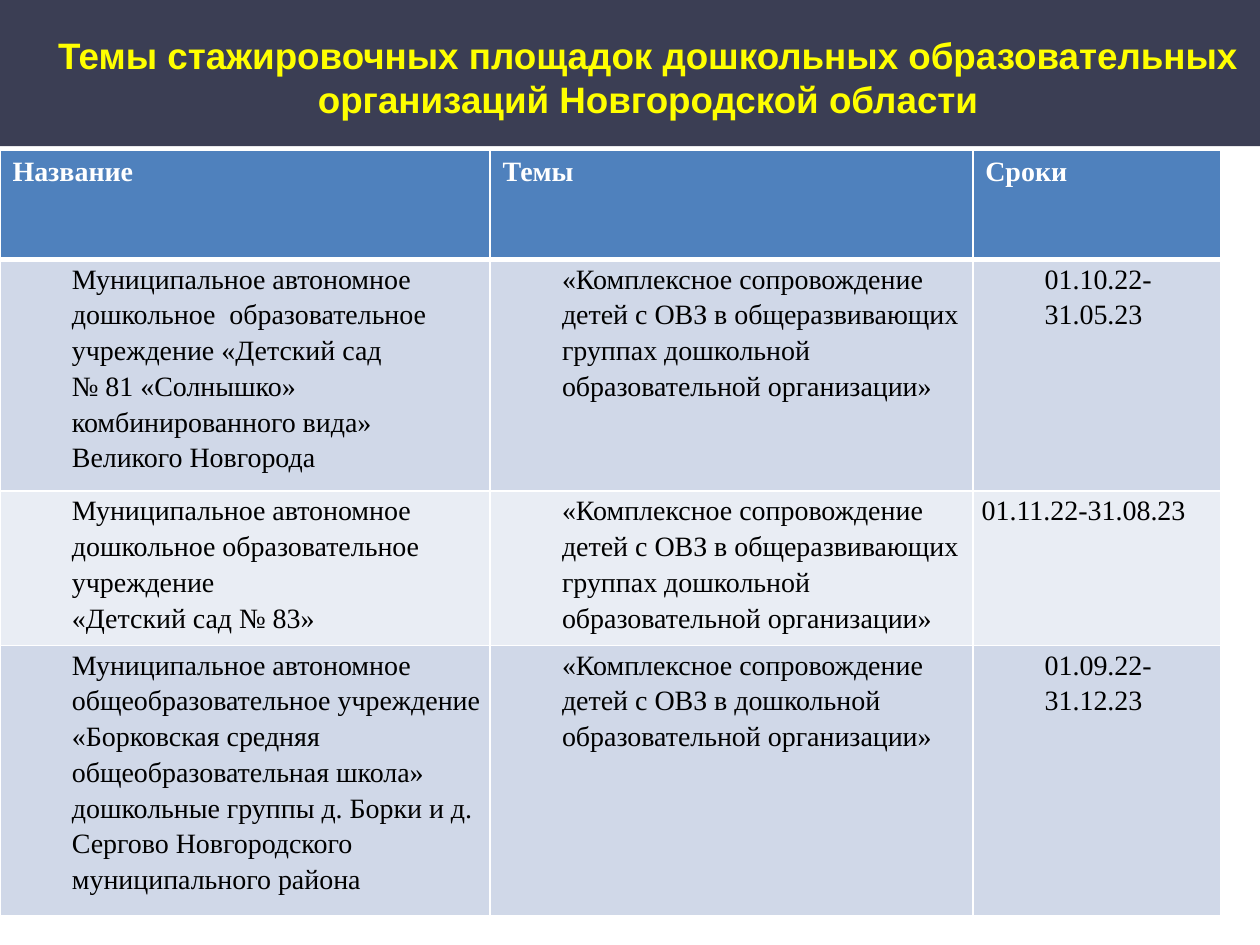
from dataclasses import dataclass

from lxml import etree
from pptx import Presentation
from pptx.dml.color import RGBColor
from pptx.enum.shapes import MSO_SHAPE
from pptx.enum.text import PP_ALIGN
from pptx.oxml.ns import qn
from pptx.util import Cm, Pt

RECTANGLE = MSO_SHAPE.RECTANGLE
CENTER = PP_ALIGN.CENTER


@dataclass(frozen=True)
class Theme:
    band: str = "3B3E54"
    title: str = "FFFF00"
    header: str = "4F81BD"
    odd_row: str = "D0D8E8"
    even_row: str = "E9EDF4"
    light: str = "FFFFFF"
    dark: str = "000000"
    title_font: str = "Arial"
    table_font: str = "Times New Roman"
    title_size: int = 21
    table_size: int = 16
    border: int = 1
    header_border: int = 3


THEME = Theme()
TITLE = "Темы стажировочных площадок дошкольных образовательных организаций Новгородской области"
HEADERS = ["Название", "Темы", "Сроки"]
GENERAL_TOPIC = (
    "«Комплексное сопровождение детей с ОВЗ в общеразвивающих "
    "группах дошкольной образовательной организации»"
)
ROWS = [
    [
        "Муниципальное автономное\n"
        "дошкольное  образовательное учреждение «Детский сад\n"
        "№ 81 «Солнышко» комбинированного вида» Великого Новгорода",
        GENERAL_TOPIC,
        "01.10.22-31.05.23",
    ],
    [
        "Муниципальное автономное дошкольное образовательное учреждение\n"
        "«Детский сад № 83»",
        GENERAL_TOPIC,
        "01.11.22-31.08.23",
    ],
    [
        "Муниципальное автономное общеобразовательное учреждение "
        "«Борковская средняя общеобразовательная школа» дошкольные группы "
        "д. Борки и д. Сергово Новгородского муниципального района",
        "«Комплексное сопровождение детей с ОВЗ в дошкольной "
        "образовательной организации»",
        "01.09.22-31.12.23",
    ],
]
UNINDENTED_CELL = (2, 2)
COLUMN_WIDTHS = [9.88, 9.73, 5.0]
ROW_HEIGHTS = [2.2, 4.3, 2.86, 5.0]


def style_text(frame, font, size, color, bold):
    for paragraph in frame.paragraphs:
        for span in paragraph.runs:
            span.font.name = font
            span.font.size = Pt(size)
            span.font.bold = bold
            span.font.color.rgb = RGBColor.from_string(color)


def add_band(page, width):
    band = page.shapes.add_shape(RECTANGLE, 0, 0, width, Cm(2.95))
    band.shadow.inherit = False
    band.fill.solid()
    band.fill.fore_color.rgb = RGBColor.from_string(THEME.band)
    band.line.fill.background()


def add_title(page):
    box = page.shapes.add_textbox(Cm(1.09), Cm(0.66), Cm(23.95), Cm(1.8))
    frame = box.text_frame
    frame.word_wrap = True
    frame.margin_left = frame.margin_right = 0
    frame.margin_top = frame.margin_bottom = 0
    frame.text = TITLE
    frame.paragraphs[0].alignment = CENTER
    style_text(frame, THEME.title_font, THEME.title_size, THEME.title, True)


def set_borders(cell, bottom_width):
    properties = cell._tc.get_or_add_tcPr()
    widths = {"lnL": THEME.border, "lnR": THEME.border, "lnT": THEME.border, "lnB": bottom_width}
    for position, (side, width) in enumerate(widths.items()):
        line = etree.Element(qn(f"a:{side}"), w=str(Pt(width)))
        fill = etree.SubElement(line, qn("a:solidFill"))
        etree.SubElement(fill, qn("a:srgbClr"), val=THEME.light)
        properties.insert(position, line)


def fill_cell(cell, text, background, color, bold, bottom_width):
    cell.text_frame.text = text
    style_text(cell.text_frame, THEME.table_font, THEME.table_size, color, bold)
    cell.fill.solid()
    cell.fill.fore_color.rgb = RGBColor.from_string(background)
    set_borders(cell, bottom_width)


def set_body_spacing(cell, indented):
    cell.margin_left = cell.margin_right = Cm(0.18)
    cell.margin_top = cell.margin_bottom = 0
    for paragraph in cell.text_frame.paragraphs:
        paragraph.line_spacing = 1.15
        if indented:
            paragraph._p.get_or_add_pPr().set("marL", str(Cm(1.27)))


def add_schedule(page):
    table = page.shapes.add_table(
        len(ROW_HEIGHTS), len(COLUMN_WIDTHS), 0, Cm(3.03),
        Cm(sum(COLUMN_WIDTHS)), Cm(sum(ROW_HEIGHTS)),
    ).table
    for column, width in zip(table.columns, COLUMN_WIDTHS):
        column.width = Cm(width)
    for row, height in zip(table.rows, ROW_HEIGHTS):
        row.height = Cm(height)
    for column, text in enumerate(HEADERS):
        fill_cell(table.cell(0, column), text, THEME.header, THEME.light, True, THEME.header_border)
    for row, texts in enumerate(ROWS, start=1):
        background = THEME.odd_row if row % 2 else THEME.even_row
        for column, text in enumerate(texts):
            cell = table.cell(row, column)
            fill_cell(cell, text, background, THEME.dark, False, THEME.border)
            set_body_spacing(cell, (row, column) != UNINDENTED_CELL)


def main():
    deck = Presentation()
    deck.slide_width, deck.slide_height = Cm(25.4), Cm(19.05)
    page = deck.slides.add_slide(deck.slide_layouts[6])
    add_band(page, deck.slide_width)
    add_title(page)
    add_schedule(page)
    deck.save("out.pptx")


if __name__ == "__main__":
    main()
